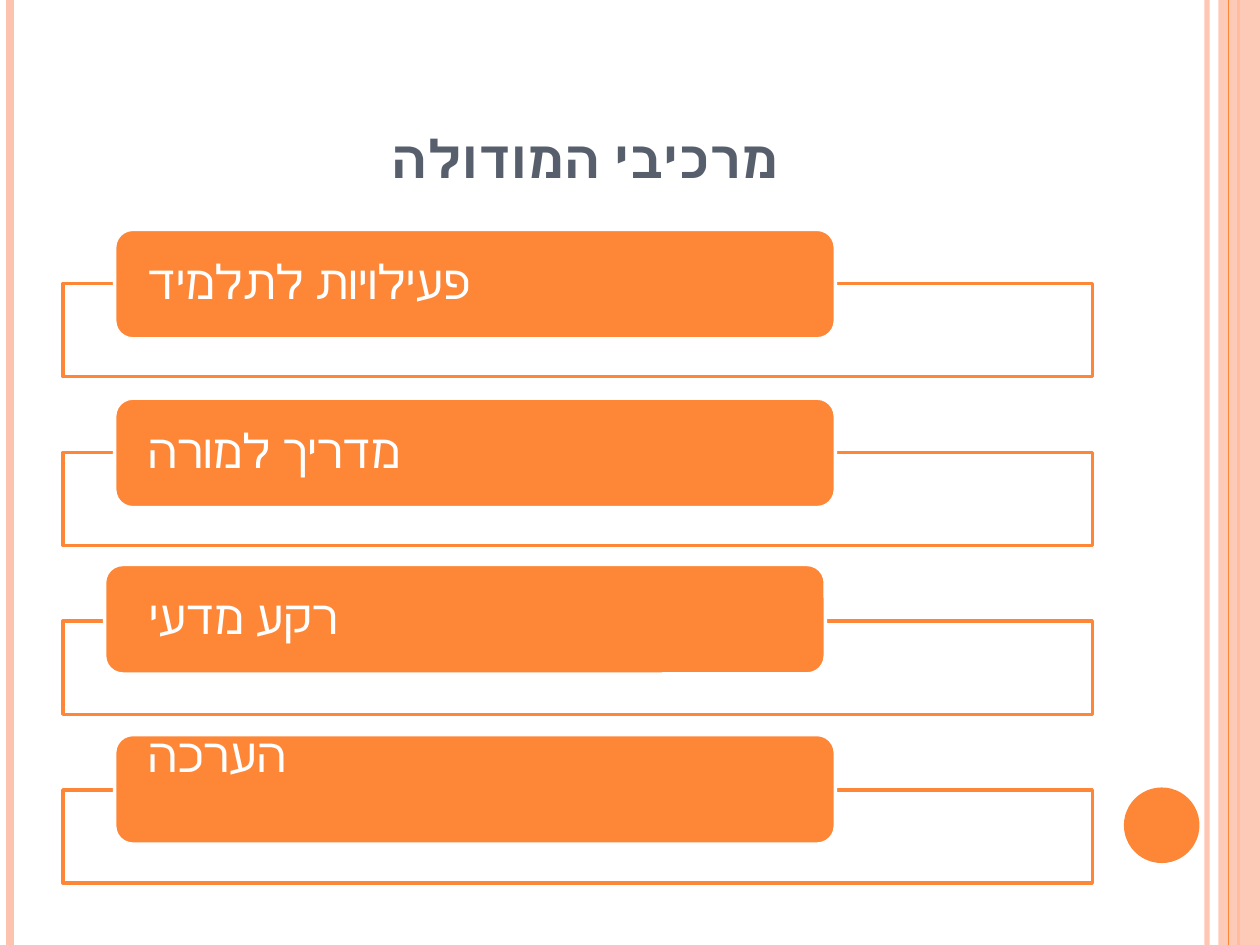
from lxml import etree
from pptx import Presentation
from pptx.dml.color import RGBColor
from pptx.enum.shapes import MSO_CONNECTOR, MSO_SHAPE
from pptx.enum.text import MSO_ANCHOR, PP_ALIGN
from pptx.oxml.ns import qn
from pptx.util import Inches, Pt

COLORS = {"orange": "FE8637", "peach": "FEC3AE", "slate": "575F6D", "white": "FFFFFF"}
FONT = "Cambria"

TITLE = "מרכיבי המודולה "
# label, tab left, tab top, left inset, bottom inset
MODULE_PARTS = [
    ("פעילויות לתלמיד", 0.91, 1.82, 0.22, 0),
    ("מדריך למורה", 0.91, 3.16, 0.22, 0),
    ("רקע מדעי", 0.83, 4.48, 0.31, 0),
    ("הערכה", 0.91, 5.83, 0.22, 0.51),
]
FRAME_LEFT, FRAME_TOP, FRAME_WIDTH, FRAME_HEIGHT = 0.5, 2.25, 8.17, 0.74
FRAME_STEP = 1.34
TAB_WIDTH, TAB_HEIGHT = 5.72, 0.87

# x, color, width in points, opacity in percent
STRIPES_BEHIND = [
    (9.58, "peach", 3, 93),
    (0.08, "peach", 4.5, 100),
    (9.83, "orange", 1.5, 100),
]
STRIPES_IN_FRONT = [(9.75, "orange", 0.75, 100)]


def rgb(name):
    return RGBColor.from_string(COLORS[name])


def set_opacity(fill, percent):
    color = fill._xPr.find(qn("a:solidFill"))[0]
    etree.SubElement(color, qn("a:alpha")).set("val", str(percent * 1000))


def add_stripes(slide, stripes):
    for x, color, width, opacity in stripes:
        line = slide.shapes.add_connector(
            MSO_CONNECTOR.STRAIGHT, Inches(x), 0, Inches(x), Inches(7.5))
        line.line.color.rgb = rgb(color)
        line.line.width = Pt(width)
        if opacity < 100:
            set_opacity(line.line.fill, opacity)
        etree.SubElement(line._element.spPr, qn("a:effectLst"))


def add_box(slide, kind, box, fill, line=None, opacity=100):
    shape = slide.shapes.add_shape(kind, *map(Inches, box))
    shape.shadow.inherit = False
    shape.fill.solid()
    shape.fill.fore_color.rgb = rgb(fill)
    if opacity < 100:
        set_opacity(shape.fill, opacity)
    if line:
        shape.line.color.rgb = rgb(line)
        shape.line.width = Pt(2)
    else:
        shape.line.fill.background()
    return shape


def write_hebrew(text_frame, text, size, color, align, anchor):
    """Write one right-to-left paragraph and return it."""
    text_frame.text = text
    text_frame.word_wrap = True
    text_frame.vertical_anchor = anchor
    paragraph = text_frame.paragraphs[0]
    paragraph.alignment = align
    paragraph._p.get_or_add_pPr().set("rtl", "1")
    font = paragraph.runs[0].font
    font.name = FONT
    font.size = Pt(size)
    font.color.rgb = rgb(color)
    return paragraph


def add_title(slide):
    title = slide.shapes.add_textbox(*map(Inches, (0.5, 0.3, 8.17, 1.25)))
    paragraph = write_hebrew(
        title.text_frame, TITLE, 30, "slate", PP_ALIGN.CENTER, MSO_ANCHOR.BOTTOM)
    font = paragraph.runs[0].font
    font.bold = True
    font._element.set("cap", "small")


def add_module_part(slide, index, label, left, top, left_inset, bottom_inset):
    frame_top = FRAME_TOP + index * FRAME_STEP
    add_box(slide, MSO_SHAPE.RECTANGLE,
            (FRAME_LEFT, frame_top, FRAME_WIDTH, FRAME_HEIGHT), "white", "orange", 90)
    tab = add_box(slide, MSO_SHAPE.ROUNDED_RECTANGLE,
                  (left, top, TAB_WIDTH, TAB_HEIGHT), "orange", "white")
    text_frame = tab.text_frame
    text_frame.margin_left, text_frame.margin_right = Inches(left_inset), Inches(0.22)
    text_frame.margin_top, text_frame.margin_bottom = 0, Inches(bottom_inset)
    paragraph = write_hebrew(
        text_frame, label, 27, "white", PP_ALIGN.LEFT, MSO_ANCHOR.MIDDLE)
    paragraph.line_spacing = 0.9


def main():
    presentation = Presentation()
    presentation.slide_width, presentation.slide_height = Inches(10), Inches(7.5)
    slide = presentation.slides.add_slide(presentation.slide_layouts[6])

    add_stripes(slide, STRIPES_BEHIND)
    add_box(slide, MSO_SHAPE.RECTANGLE, (9.67, 0, 0.33, 7.5), "peach", opacity=87)
    add_stripes(slide, STRIPES_IN_FRONT)
    add_box(slide, MSO_SHAPE.OVAL, (8.92, 6.25, 0.6, 0.6), "orange")
    add_title(slide)
    for index, part in enumerate(MODULE_PARTS):
        add_module_part(slide, index, *part)

    presentation.save("out.pptx")


if __name__ == "__main__":
    main()
